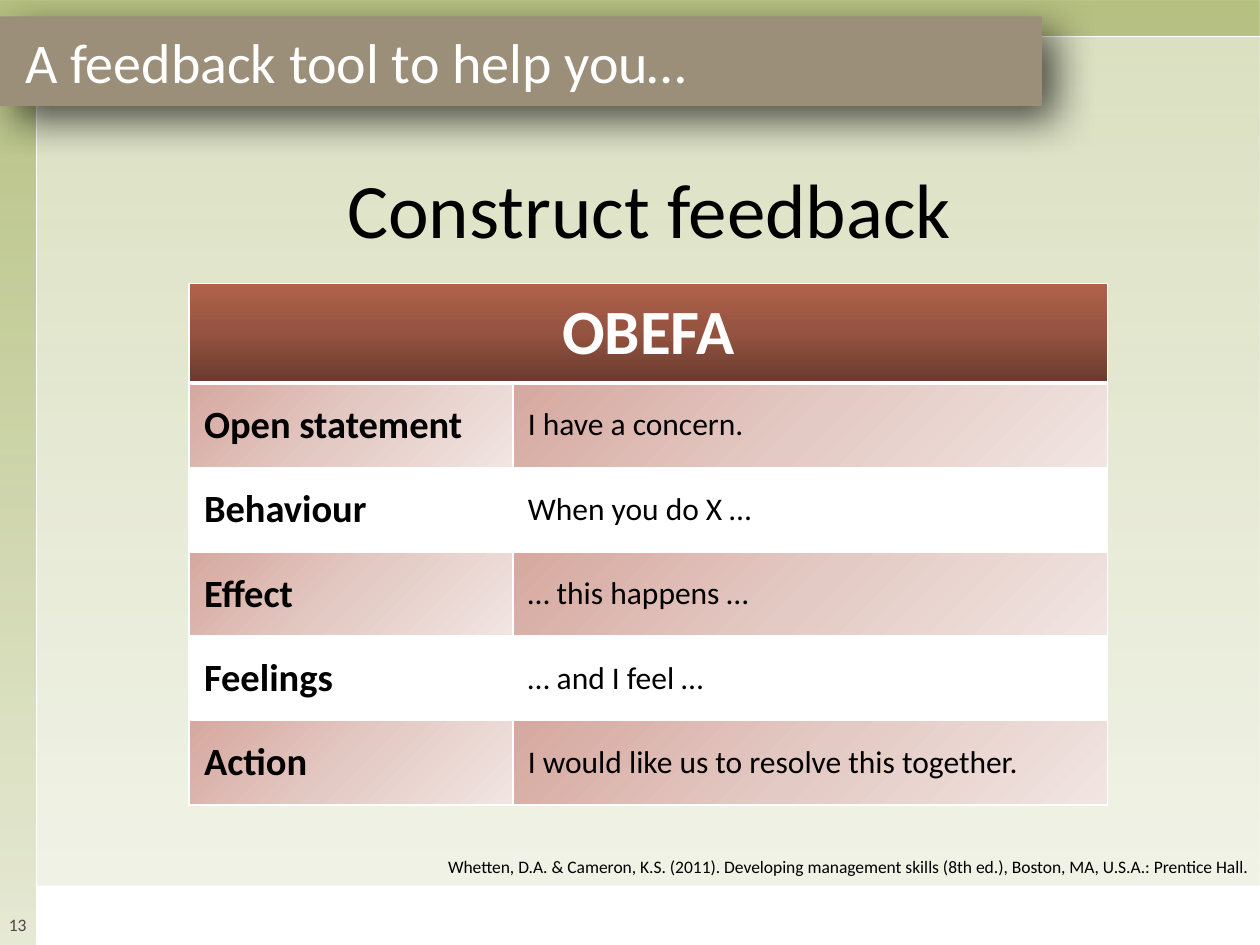
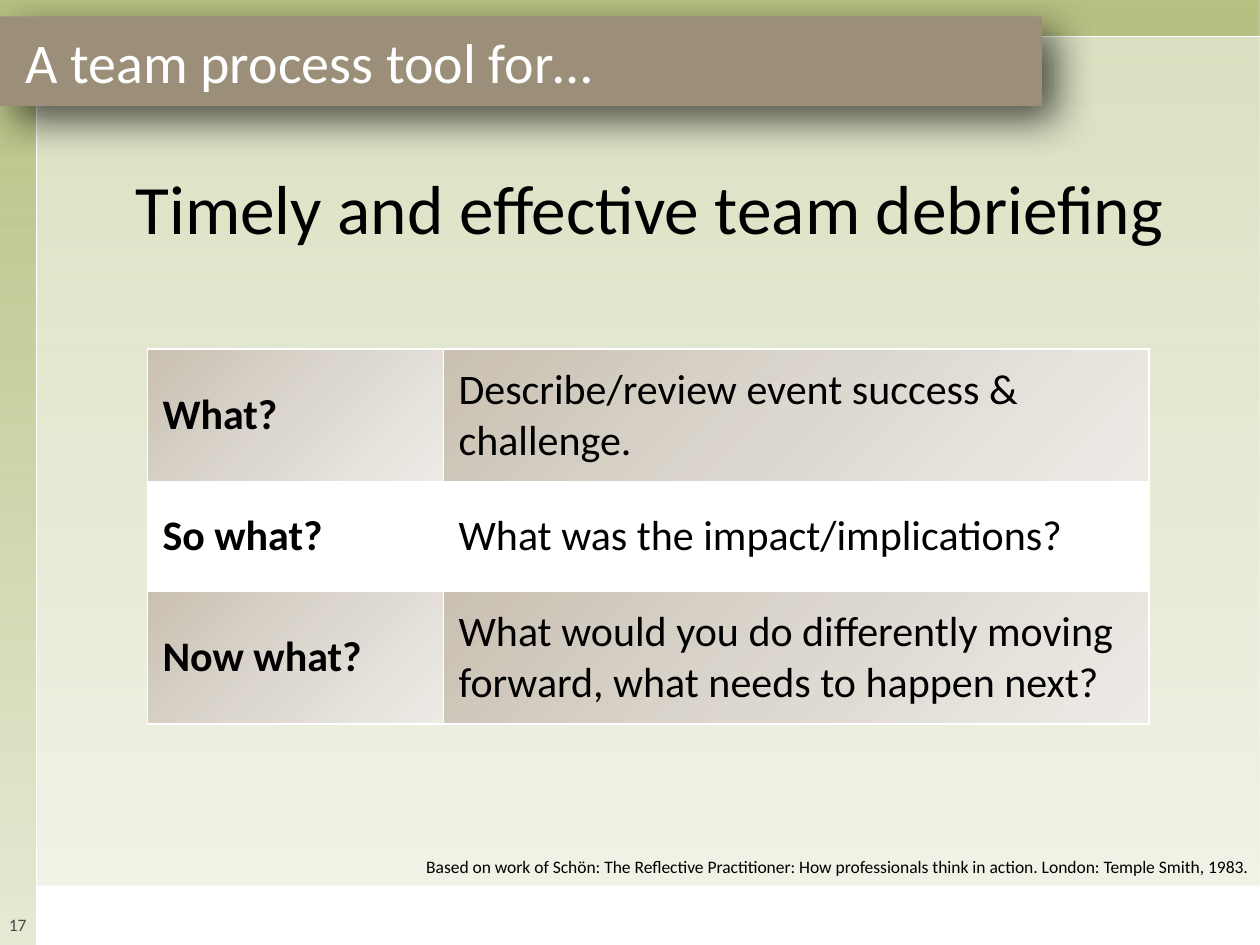
from lxml.etree import SubElement
from pptx import Presentation
from pptx.dml.color import RGBColor
from pptx.enum.shapes import MSO_SHAPE
from pptx.enum.text import MSO_ANCHOR, MSO_AUTO_SIZE, PP_ALIGN
from pptx.oxml.ns import qn
from pptx.util import Inches, Pt

HUES = {
    "white": "FFFFFF", "black": "000000", "green": "9EAC58",
    "taupe": "9B8F79", "grey": "514746",
}
# Gradient stops: (position, colour, opacity), all in percent
FADES = {
    "page": (90, [(0, HUES["green"], 75), (50, HUES["green"], 50), (100, HUES["green"], 25)]),
    "head": (270, [(0, "683A2D", 100), (50, "945340", 100), (100, "B0624B", 100)]),
    "rose": (45, [(0, "D6A89F", 100), (50, "E4CAC4", 100), (100, "F1E5E2", 100)]),
    "sand": (45, [(0, "C9C0B1", 100), (50, "DCD7CF", 100), (100, "EEEBE7", 100)]),
    "veil": (90, [(0, HUES["white"], 50), (100, HUES["white"], 50)]),
}
FONTS = {
    "title": {"size": Pt(44)},
    "band": {"size": Pt(32)},
    "head": {"size": Pt(36), "bold": True},
    "note": {"size": Pt(10)},
}


def add(node, tag, **attrs):
    return SubElement(node, qn(tag), {key: str(val) for key, val in attrs.items()})


def tint(node, hue, alpha=100):
    clr = add(node, "a:srgbClr", val=hue)
    if alpha < 100:
        add(clr, "a:alpha", val=alpha * 1000)


class Deck:
    def __init__(self):
        self.prs = Presentation()
        self.prs.slide_width, self.prs.slide_height = Inches(10), Inches(7.5)
        self.slide = None

    def paint(self, item, props, name):
        """Fill a shape or cell with a plain colour or a gradient."""
        item.fill.solid()
        item.fill.fore_color.rgb = RGBColor.from_string(HUES.get(name, HUES["white"]))
        if name in FADES:
            angle, stops = FADES[name]
            plain = props.find(qn("a:solidFill"))
            fade = add(props, "a:gradFill", rotWithShape=1)
            props.replace(plain, fade)
            steps = add(fade, "a:gsLst")
            for pos, hue, alpha in stops:
                tint(add(steps, "a:gs", pos=pos * 1000), hue, alpha)
            add(fade, "a:lin", ang=angle * 60000, scaled=0)

    def text(self, frame, words, font, hue="black", align=PP_ALIGN.LEFT):
        para = frame.paragraphs[0]
        para.alignment = align
        para.space_before = Pt(0)
        run = para.add_run()
        run.text = words
        for key, val in {"name": "Calibri", **font}.items():
            setattr(run.font, key, val)
        run.font.color.rgb = RGBColor.from_string(HUES[hue])

    def fit(self, frame, anchor, pad=(0.1, 0.05, 0.1, 0.05)):
        sides = ("margin_left", "margin_top", "margin_right", "margin_bottom")
        form = dict(zip(sides, map(Inches, pad)))
        form.update(word_wrap=True, auto_size=MSO_AUTO_SIZE.NONE, vertical_anchor=anchor)
        for key, val in form.items():
            setattr(frame, key, val)

    def place(self, shape, box):
        for key, val in zip(("left", "top", "width", "height"), box):
            setattr(shape, key, Inches(val))

    def rect(self, box, fill, line=None):
        shape = self.slide.shapes.add_shape(MSO_SHAPE.RECTANGLE, *map(Inches, box))
        shape.shadow.inherit = False
        self.paint(shape, shape.element.spPr, fill)
        if line:
            shape.line.color.rgb = RGBColor.from_string(HUES[line])
            shape.line.width = Pt(1)
        else:
            shape.line.fill.background()

    def label(self, box, words, anchor, pad, hue, align):
        frame = self.slide.shapes.add_textbox(*map(Inches, box)).text_frame
        self.fit(frame, anchor, pad)
        self.text(frame, words, FONTS["note"], hue, align)

    def page(self, number, band, title, note, size=44):
        """Start a slide with its backdrop, band, title, number and source."""
        self.slide = self.prs.slides.add_slide(self.prs.slide_layouts[1])
        head, body = self.slide.placeholders
        # Backdrop
        self.rect((-0.01, 0, 10.01, 7.5), "page")
        self.rect((0.29, 0.29, 9.72, 7.2), "veil", "white")
        self.rect((0.29, 7.03, 9.72, 0.47), "white")
        self.label((0, 7.03, 0.28, 0.47), str(number), MSO_ANCHOR.BOTTOM,
                   (0, 0.04, 0, 0.08), "grey", PP_ALIGN.CENTER)
        # Title and band lie above the backdrop
        for shape in (head, body):
            shape.element.getparent().append(shape.element)
        self.place(head, (0.58, 1.02, 9.15, 1.25))
        self.fit(head.text_frame, MSO_ANCHOR.MIDDLE)
        self.text(head.text_frame, title, {**FONTS["title"], "size": Pt(size)},
                  align=PP_ALIGN.CENTER)
        self.band(body, band)
        # Source line
        self.label((0, 6.74, 10, 0.27), note, MSO_ANCHOR.MIDDLE,
                   (0.1, 0.05, 0.1, 0.05), "black", PP_ALIGN.RIGHT)

    def band(self, body, words):
        self.place(body, (0, 0.13, 8.27, 0.71))
        props = body.element.spPr
        self.paint(body, props, "taupe")
        shade = add(add(props, "a:effectLst"), "a:outerShdw", blurRad=Pt(23),
                    dist=Pt(11), dir=45 * 60000, algn="tl", rotWithShape=0)
        tint(shade, HUES["black"], 65)
        frame = body.text_frame
        self.fit(frame, MSO_ANCHOR.MIDDLE, (0.2, 0.05, 0.1, 0.05))
        form = frame.paragraphs[0]._p.get_or_add_pPr()
        form.set("marL", "0")
        form.set("indent", "0")
        add(form, "a:buNone")
        self.text(frame, words, FONTS["band"], "white")

    def cell(self, cell, words, fill, font, pad, hue="black", align=PP_ALIGN.LEFT, base=1):
        props = cell._tc.get_or_add_tcPr()
        for side in "LRTB":
            line = add(props, f"a:ln{side}", w=Pt(base if side == "B" else 1))
            tint(add(line, "a:solidFill"), HUES["white"])
        self.paint(cell, props, fill)
        cell.vertical_anchor = MSO_ANCHOR.MIDDLE
        cell.margin_left = cell.margin_right = Inches(0.12)
        cell.margin_top = cell.margin_bottom = Inches(pad)
        self.text(cell.text_frame, words, font, hue, align)

    def table(self, spot, cols, high, rows, fill, sizes, pad, head=None):
        """Draw a banded two-column table, with an optional merged header."""
        top = 1 if head else 0
        count = len(rows) + top
        grid = self.slide.shapes.add_table(
            count, 2, *map(Inches, (*spot, sum(cols), high * count))).table
        grid.first_row = grid.horz_banding = False
        for col, wide in zip(grid.columns, cols):
            col.width = Inches(wide)
        for row in grid.rows:
            row.height = Inches(high)
        if head:
            grid.rows[0].height = Inches(0.79)
            grid.cell(0, 0).merge(grid.cell(0, 1))
            for col, words in enumerate((head, "")):
                self.cell(grid.cell(0, col), words, "head", FONTS["head"], 0.08,
                          "white", PP_ALIGN.CENTER, base=3)
        for num, row in enumerate(rows):
            for col, words in enumerate(row):
                self.cell(grid.cell(num + top, col), words, "white" if num % 2 else fill,
                          {"size": Pt(sizes[col]), "bold": col == 0}, pad)


def main():
    deck = Deck()

    # Feedback tool
    deck.page(13, "A feedback tool to help you…", "Construct feedback",
              "Whetten, D.A. & Cameron, K.S. (2011). Developing management skills "
              "(8th ed.), Boston, MA, U.S.A.: Prentice Hall.")
    deck.table((1.5, 2.25), (2.57, 4.72), 0.67, [
        ("Open statement", "I have a concern."),
        ("Behaviour", "When you do X …"),
        ("Effect", "… this happens …"),
        ("Feelings", "… and I feel …"),
        ("Action", "I would like us to resolve this together."),
    ], "rose", (22, 18), 0.04, head="OBEFA")

    # Debriefing tool
    deck.page(17, "A team process tool for…", "Timely and effective team debriefing",
              "Based on work of Schön: The Reflective Practitioner: How professionals "
              "think in action. London: Temple Smith, 1983.", size=39.6)
    deck.table((1.17, 2.77), (2.35, 5.6), 0.87, [
        ("What?", "Describe/review event success & challenge."),
        ("So what?", "What was the impact/implications?"),
        ("Now what?", "What would you do differently moving forward, "
                      "what needs to happen next?"),
    ], "sand", (24, 24), 0.12)

    deck.prs.save("out.pptx")


if __name__ == "__main__":
    main()
